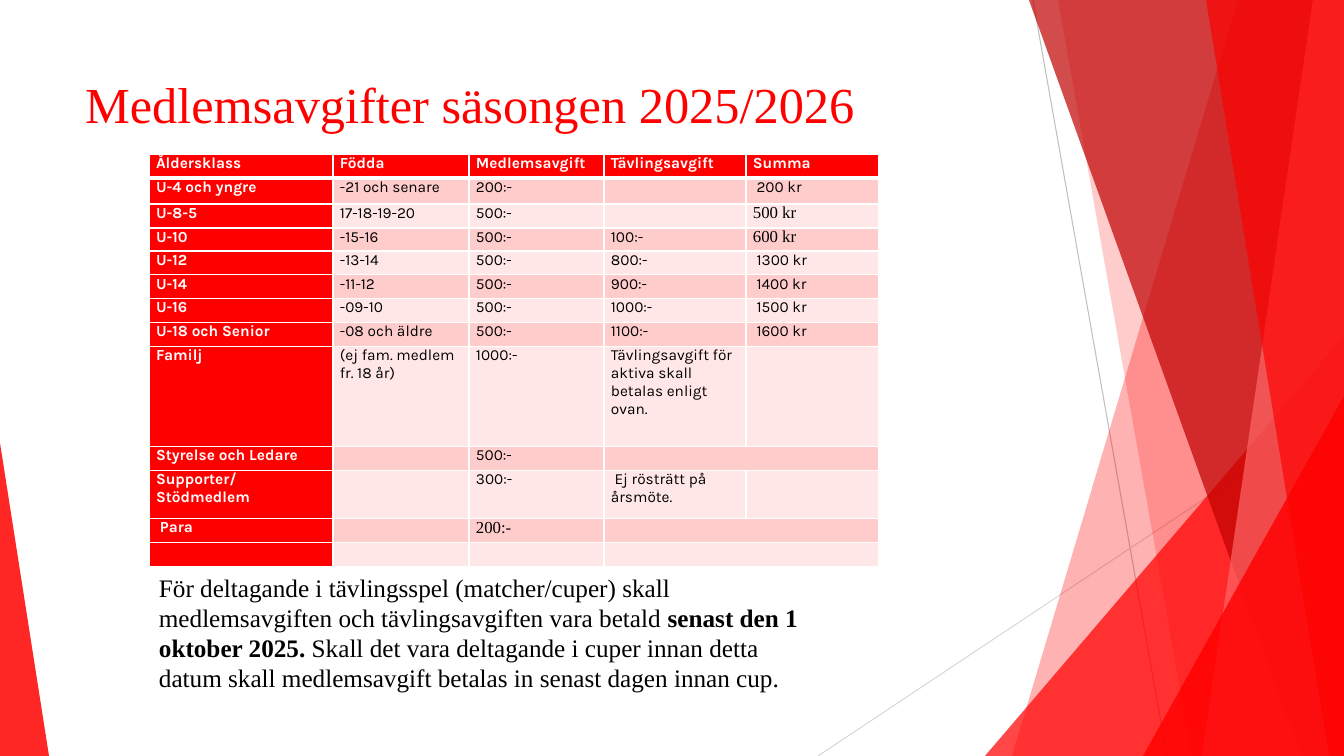
from lxml.etree import SubElement
from pptx import Presentation
from pptx.dml.color import RGBColor
from pptx.enum.shapes import MSO_CONNECTOR, MSO_SHAPE
from pptx.enum.text import MSO_ANCHOR, MSO_AUTO_SIZE, PP_ALIGN
from pptx.oxml.ns import qn
from pptx.util import Pt

PX = 914400 / 100.8
WIDTH, HEIGHT = 1344, 756

COLORS = {
    "red": "FF0000", "dark_red": "BF0000", "light_red": "FF6666",
    "band_dark": "FFCCCC", "band_light": "FFE7E7",
    "white": "FFFFFF", "black": "000000",
    "grey": "BFBFBF", "pale_grey": "D9D9D9",
}
SERIF, SANS = "Times New Roman", "Karla"

COL_WIDTHS = [184, 136, 135, 142, 133]
ROW_HEIGHTS = [24, 26, 24, 23, 24, 24, 24, 24, 100, 24, 48, 24, 24]
FEES = [
    ["Åldersklass", "Födda", "Medlemsavgift", "Tävlingsavgift", "Summa"],
    ["U-4 och yngre", "-21 och senare", "200:-", "", " 200 kr"],
    ["U-8-5", "17-18-19-20", "500:-", "", "500 kr"],
    ["U-10", "-15-16", "500:-", "100:-", "600 kr"],
    ["U-12", "-13-14", "500:-", "800:-", " 1300 kr"],
    ["U-14", "-11-12", "500:-", "900:-", " 1400 kr"],
    ["U-16", "-09-10", "500:-", "1000:-", " 1500 kr"],
    ["U-18 och Senior", "-08 och äldre", "500:-", "1100:-", " 1600 kr"],
    ["Familj", "(ej fam. medlem fr. 18 år)", "1000:-",
     "Tävlingsavgift för aktiva skall betalas enligt ovan.", ""],
    ["Styrelse och Ledare", "", "500:-", "", ""],
    ["Supporter/Stödmedlem", "", "300:-", " Ej rösträtt på årsmöte.", ""],
    [" Para", "", "200:-", "", ""],
    ["", "", "", "", ""],
]
SERIF_CELLS = {(2, 4), (3, 4), (11, 2)}
MERGED_ROWS = [9, 11, 12]

NOTE = [
    ("För deltagande i tävlingsspel (matcher/cuper) skall medlemsavgiften "
     "och tävlingsavgiften vara betald ", False),
    ("senast den 1 oktober 2025.", True),
    (" Skall det vara deltagande i cuper innan detta datum skall "
     "medlemsavgift betalas in senast dagen innan cup.", False),
]


def px(*values):
    """Turn pixel lengths into EMU."""
    return [round(v * PX) for v in values]


def rgb(color):
    return RGBColor.from_string(COLORS[color])


def add_run(p, text, color, **formats):
    r = p.add_run()
    r.text = text
    r.font.color.rgb = rgb(color)
    for name, value in formats.items():
        setattr(r.font, name, value)


def paint(sp, color, opacity):
    sp.shadow.inherit = False
    sp.line.fill.background()
    sp.fill.solid()
    sp.fill.fore_color.rgb = rgb(color)
    clr = sp.fill._xPr.find(qn("a:solidFill"))[0]
    SubElement(clr, qn("a:alpha"), val=str(opacity * 1000))


def add_line(s, start, end, color):
    line = s.shapes.add_connector(MSO_CONNECTOR.STRAIGHT, *px(*start, *end))
    line.line.color.rgb = rgb(color)
    line.line.width = Pt(0.75)
    SubElement(line._element.spPr, qn("a:effectLst"))


def add_shard(s, top, bottom, color, opacity, right=WIDTH):
    """Full-height band from a slanted left edge to the slide's right edge."""
    builder = s.shapes.build_freeform(top, 0, scale=PX)
    builder.add_line_segments([(right, 0), (right, HEIGHT), (bottom, HEIGHT)])
    paint(builder.convert_to_shape(), color, opacity)


def add_wedge(s, x, y, w, apex, opacity):
    """Triangle standing on the slide's bottom edge; apex 0 is left, 1 right."""
    sp = s.shapes.add_shape(MSO_SHAPE.ISOSCELES_TRIANGLE,
                            *px(x, y, w, HEIGHT - y))
    sp.adjustments[0] = apex
    paint(sp, "red", opacity)


def add_decoration(s):
    add_line(s, (1033, 0), (1167, HEIGHT), "grey")
    add_line(s, (WIDTH, 406), (818, HEIGHT), "pale_grey")
    add_shard(s, 1238, 1012, "red", 30)
    add_shard(s, 1058, 1192, "red", 20)
    add_wedge(s, 985, 336, 359, 1, 72)
    add_shard(s, 1029, 1301, "dark_red", 70)
    add_shard(s, 1313, 1202, "light_red", 70)
    add_shard(s, 1206, 1329, "red", 65)
    add_wedge(s, 1143, 396, 201, 1, 80)
    add_wedge(s, 0, 443, 49, 0, 85)


def set_title(s, text):
    title = s.shapes.title
    s.shapes._spTree.append(title._element)
    title.left, title.top, title.width, title.height = px(75, 68, 948, 145)
    tf = title.text_frame
    tf.vertical_anchor = MSO_ANCHOR.TOP
    tf.auto_size = MSO_AUTO_SIZE.NONE
    p = tf.paragraphs[0]
    p.alignment = PP_ALIGN.LEFT
    add_run(p, text, "red", size=Pt(36), name=SERIF)


def set_borders(cell, bottom):
    tcPr = cell._tc.get_or_add_tcPr()
    for side, width in {"L": 1, "R": 1, "T": 1, "B": bottom}.items():
        ln = SubElement(tcPr, qn("a:ln" + side), w=str(Pt(width)))
        fill = SubElement(ln, qn("a:solidFill"))
        SubElement(fill, qn("a:srgbClr"), val=COLORS["white"])


def fill_cell(cell, row, col, text):
    heading = row == 0 or col == 0
    margin = px(7)[0]
    for name, value in {"margin_left": margin, "margin_right": margin,
                        "margin_top": 0, "margin_bottom": 0}.items():
        setattr(cell, name, value)
    set_borders(cell, 3 if row == 0 else 1)
    band = "band_dark" if row % 2 else "band_light"
    cell.fill.solid()
    cell.fill.fore_color.rgb = rgb("red" if heading else band)
    p = cell.text_frame.paragraphs[0]
    if not text:
        SubElement(p._p, qn("a:endParaRPr"), sz="1100")
        return
    size, font = (12, SERIF) if (row, col) in SERIF_CELLS else (11, SANS)
    add_run(p, text, "white" if heading else "black",
            size=Pt(size), name=font, bold=heading)


def add_fee_table(s):
    frame = s.shapes.add_table(len(FEES), len(COL_WIDTHS), *px(
        149, 154, sum(COL_WIDTHS), sum(ROW_HEIGHTS)))
    table = frame.table
    table.horz_banding = False
    for column, width in zip(table.columns, COL_WIDTHS):
        column.width = px(width)[0]
    for row, height in zip(table.rows, ROW_HEIGHTS):
        row.height = px(height)[0]
    for i, texts in enumerate(FEES):
        for j, text in enumerate(texts):
            fill_cell(table.cell(i, j), i, j, text)
    for i in MERGED_ROWS:
        table.cell(i, 3).merge(table.cell(i, 4))


def add_note(s):
    tf = s.shapes.add_textbox(*px(149, 567, 672, 132)).text_frame
    tf.word_wrap = True
    tf.auto_size = MSO_AUTO_SIZE.SHAPE_TO_FIT_TEXT
    for text, bold in NOTE:
        add_run(tf.paragraphs[0], text, "black",
                size=Pt(18), name=SERIF, bold=bold)


def main():
    prs = Presentation()
    prs.slide_width, prs.slide_height = px(WIDTH, HEIGHT)
    s = prs.slides.add_slide(prs.slide_layouts[5])
    add_decoration(s)
    set_title(s, "Medlemsavgifter säsongen 2025/2026")
    add_fee_table(s)
    add_note(s)
    prs.save("out.pptx")


if __name__ == "__main__":
    main()
